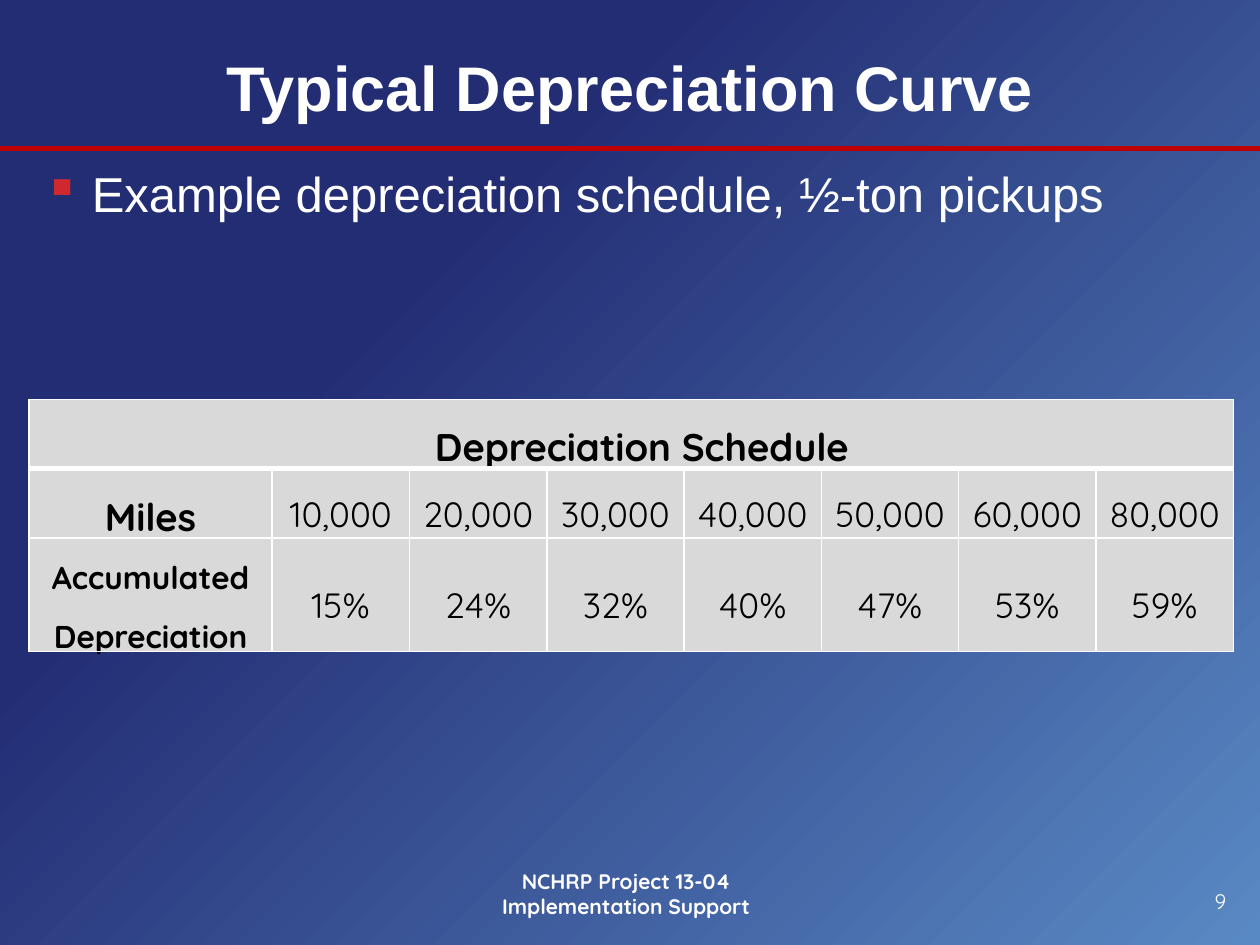
from lxml import etree
from pptx import Presentation
from pptx.dml.color import RGBColor
from pptx.enum.shapes import MSO_CONNECTOR
from pptx.enum.text import MSO_ANCHOR, PP_ALIGN
from pptx.oxml.ns import qn
from pptx.util import Inches, Pt

LEFT, CENTER, RIGHT = PP_ALIGN.LEFT, PP_ALIGN.CENTER, PP_ALIGN.RIGHT
TOP, MIDDLE = MSO_ANCHOR.TOP, MSO_ANCHOR.MIDDLE
STRAIGHT = MSO_CONNECTOR.STRAIGHT
WHITE, BLACK, GREY = "FFFFFF", "000000", "D9D9D9"
RED, BULLET_RED = "C00000", "CF292D"
NAVY, SKY = "232D74", "5989C4"

MILES = ["10,000", "20,000", "30,000", "40,000", "50,000", "60,000", "80,000"]
DEPRECIATION = ["15%", "24%", "32%", "40%", "47%", "53%", "59%"]


def color(hex_string):
    return RGBColor.from_string(hex_string)


def style_paragraph(paragraph, size, font_name, hex_string, bold, align):
    paragraph.alignment = align
    for run in paragraph.runs:
        run.font.size = Pt(size)
        run.font.name = font_name
        run.font.color.rgb = color(hex_string)
        run.font.bold = bold


def set_background(slide):
    fill = slide.background.fill
    fill.gradient()
    fill.gradient_angle = 315
    for stop, position, hex_string in zip(fill.gradient_stops, (0.31, 1), (NAVY, SKY)):
        stop.position = position
        stop.color.rgb = color(hex_string)


def add_rule(slide, top):
    line = slide.shapes.add_connector(STRAIGHT, Inches(10), Inches(top), Inches(0), Inches(top))
    line.line.color.rgb = color(RED)
    line.line.width = Pt(3)
    etree.SubElement(line._element.spPr, qn("a:effectLst"))


def add_text(slide, box, text, size, font_name, bold=False, align=CENTER, anchor=MIDDLE):
    shape = slide.shapes.add_textbox(*[Inches(length) for length in box])
    text_frame = shape.text_frame
    text_frame.word_wrap = True
    text_frame.vertical_anchor = anchor
    text_frame.text = text
    paragraph = text_frame.paragraphs[0]
    style_paragraph(paragraph, size, font_name, WHITE, bold, align)
    return paragraph


def set_bullet(paragraph, character, hex_string, indent):
    properties = paragraph._p.get_or_add_pPr()
    properties.set("marL", str(Inches(indent)))
    properties.set("indent", str(-Inches(indent)))
    bullet_color = etree.SubElement(properties, qn("a:buClr"))
    etree.SubElement(bullet_color, qn("a:srgbClr"), val=hex_string)
    etree.SubElement(properties, qn("a:buChar"), char=character)


def set_borders(cell, **widths):
    properties = cell._tc.get_or_add_tcPr()
    for side in "LRTB":
        width = widths.get(side, 1)
        border = etree.SubElement(properties, qn(f"a:ln{side}"), w=str(Pt(width)))
        fill = etree.SubElement(border, qn("a:solidFill"))
        etree.SubElement(fill, qn("a:srgbClr"), val=WHITE)


def format_cell(cell, text, size, bold, anchor=MIDDLE):
    cell.fill.solid()
    cell.fill.fore_color.rgb = color(GREY)
    cell.margin_left = cell.margin_right = Inches(0.08)
    cell.margin_top = cell.margin_bottom = 0
    cell.vertical_anchor = anchor
    cell.text_frame.text = text
    paragraph = cell.text_frame.paragraphs[0]
    paragraph.line_spacing = 1.5
    style_paragraph(paragraph, size, "Quicksand", BLACK, bold, CENTER)
    return paragraph


def add_schedule(slide):
    column_count = len(MILES) + 1
    frame = slide.shapes.add_table(
        3, column_count, Inches(0.23), Inches(3.17), Inches(9.54), Inches(1.9))
    table = frame.table
    for index, column in enumerate(table.columns):
        column.width = Inches(1.09 if index else 1.93)
    for row, height in zip(table.rows, (0.53, 0.53, 0.84)):
        row.height = Inches(height)

    for column in range(column_count):
        set_borders(table.cell(0, column), B=3)
        set_borders(table.cell(1, column), T=3)
        set_borders(table.cell(2, column))
    table.cell(0, 0).merge(table.cell(0, column_count - 1))
    heading = format_cell(table.cell(0, 0), "Depreciation Schedule", 22, True)
    heading._p.get_or_add_pPr().set("marL", str(Inches(0.17)))
    format_cell(table.cell(1, 0), "Miles", 22, True)
    format_cell(table.cell(2, 0), "Accumulated Depreciation", 18, True, TOP)
    for row, values in enumerate((MILES, DEPRECIATION), start=1):
        for column, value in enumerate(values, start=1):
            format_cell(table.cell(row, column), value, 20, False)


def main():
    presentation = Presentation()
    presentation.slide_width = Inches(10)
    presentation.slide_height = Inches(7.5)
    slide = presentation.slides.add_slide(presentation.slide_layouts[6])
    set_background(slide)
    add_rule(slide, 1.18)
    add_text(slide, (0, 0.1, 10, 1.17), "Typical Depreciation Curve", 36, "Arial", bold=True)
    bullet = add_text(slide, (0.25, 1.25, 9.58, 5.33),
                      "Example depreciation schedule, ½-ton pickups",
                      28, "Arial", align=LEFT, anchor=TOP)
    set_bullet(bullet, "▪", BULLET_RED, 0.38)
    add_text(slide, (7.58, 6.95, 2.25, 0.4), "9", 12, "Quicksand", align=RIGHT)
    add_text(slide, (3.42, 6.83, 3.1, 0.52),
             "NCHRP Project 13-04 Implementation Support", 12, "Quicksand", bold=True)
    add_schedule(slide)
    presentation.save("out.pptx")


if __name__ == "__main__":
    main()
